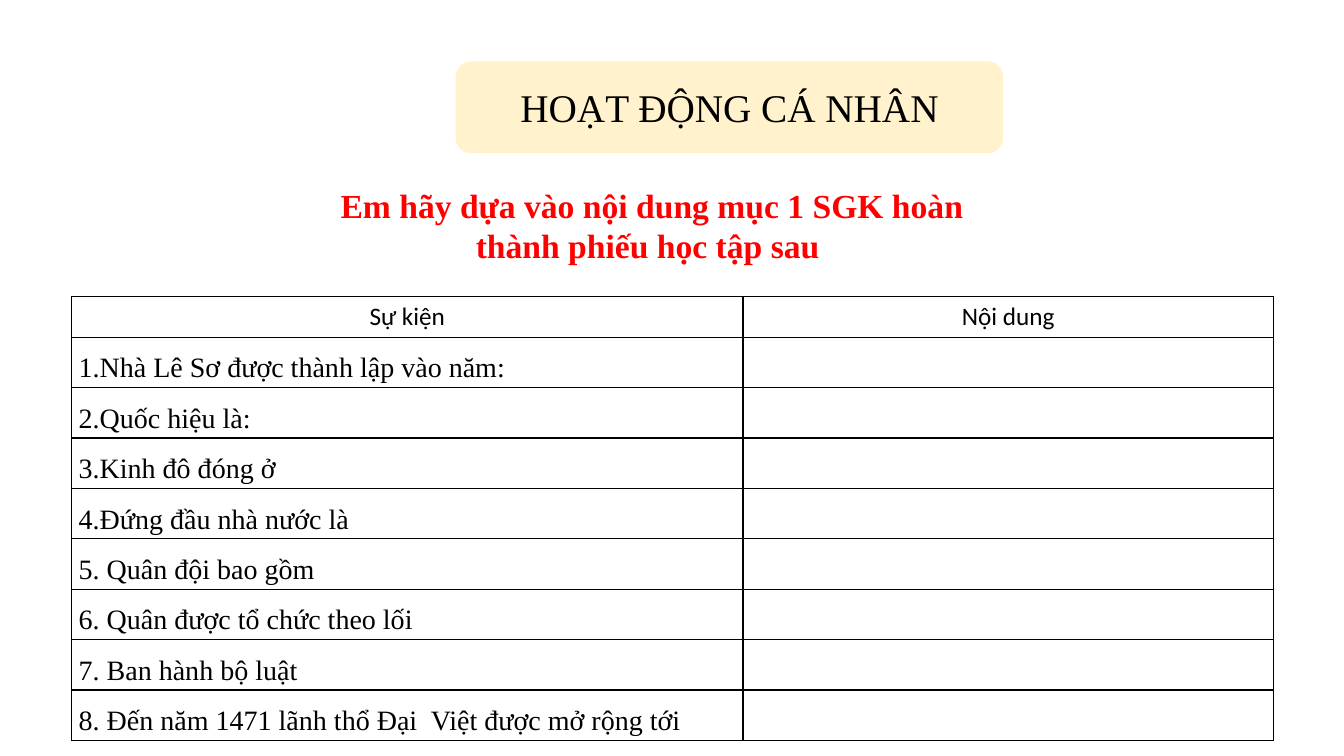
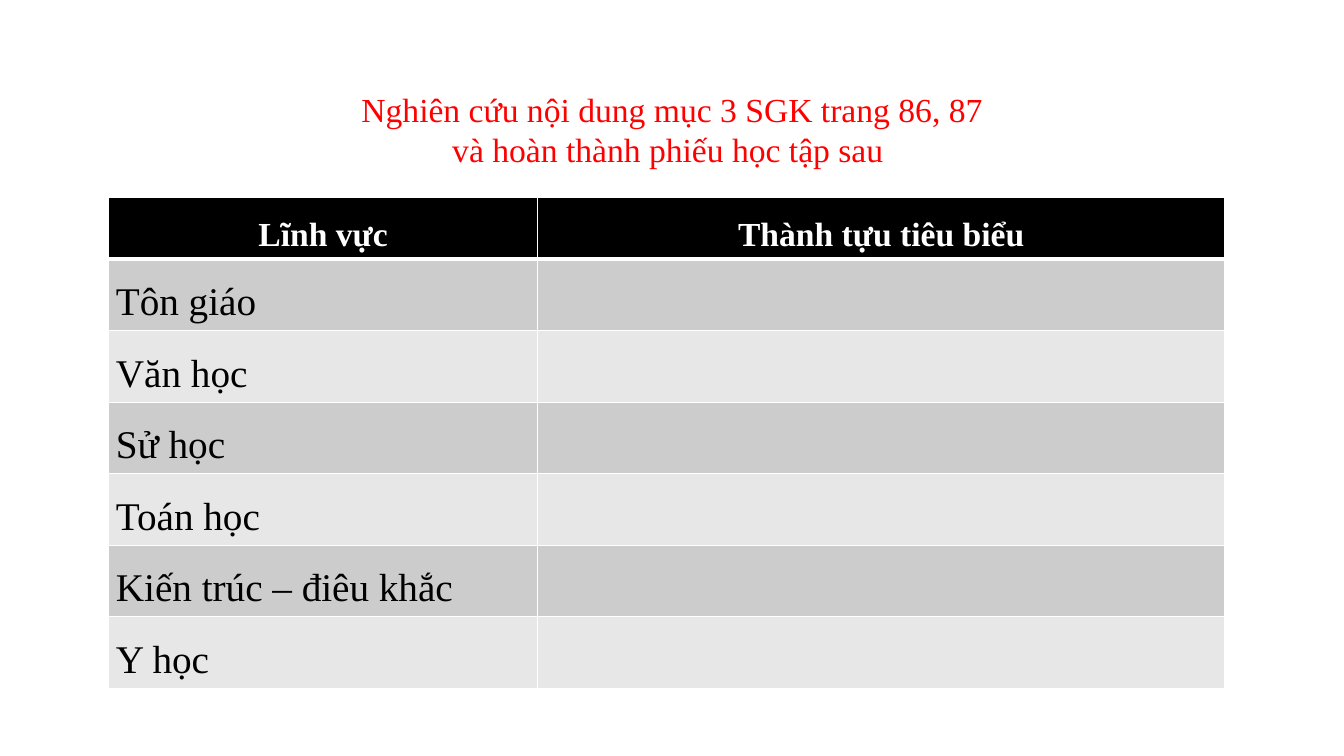
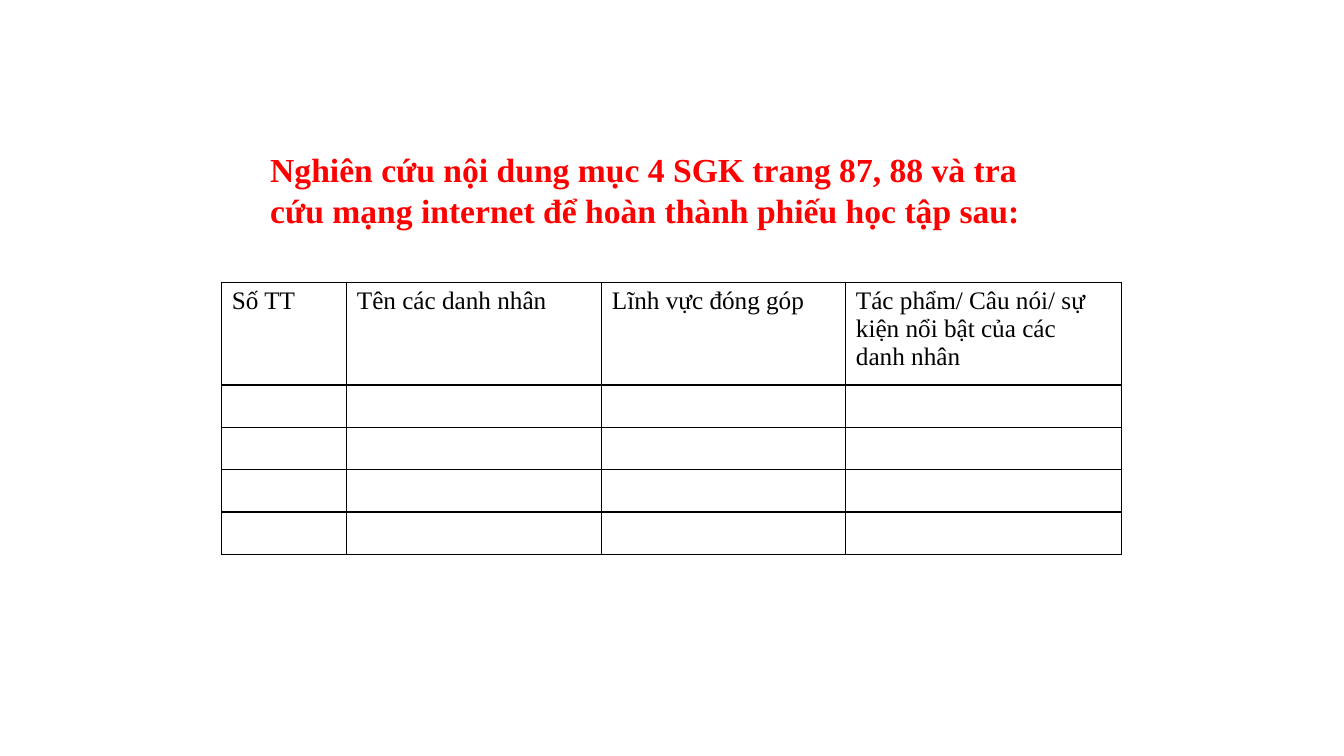
from dataclasses import dataclass

from lxml.etree import SubElement
from pptx import Presentation
from pptx.dml.color import RGBColor
from pptx.enum.shapes import MSO_SHAPE
from pptx.enum.text import MSO_ANCHOR, MSO_AUTO_SIZE, PP_ALIGN
from pptx.oxml.ns import qn
from pptx.util import Inches, Pt


@dataclass(frozen=True)
class Theme:
    serif: str = "Times New Roman"
    sans: str = "Calibri"
    black: str = "000000"
    white: str = "FFFFFF"
    red: str = "FF0000"
    cream: str = "FFF2CC"
    bands: tuple = ("CCCCCC", "E7E7E7")
    title_size: int = 24
    banner_size: int = 28
    small_size: int = 18
    list_size: int = 20
    large_size: int = 28
    line_width: int = 1
    header_rule: int = 3


THEME = Theme()
TIGHT = (0.07, 0)  # horizontal and vertical cell margins
NORMAL = (0.1, 0.05)

# Content: places and lengths in inches
BANNER = {"text": "HOẠT ĐỘNG CÁ NHÂN", "place": (4.52, 0.61, 5.43, 0.91)}

WORKSHEETS = [
    {
        "title": "Em hãy dựa vào nội dung mục 1 SGK hoàn thành phiếu học tập sau ",
        "title_place": (3.13, 1.78, 6.67, 0.91),
        "title_format": {"bold": True, "align": PP_ALIGN.CENTER},
        "banner": BANNER,
        "origin": (0.71, 2.94),
        "columns": (6.66, 5.26),
        "heights": (0.4, 0.5),
        "header": ["Sự kiện", "Nội dung"],
        "labels": [
            "1.Nhà Lê Sơ được thành lập vào năm:",
            "2.Quốc hiệu là:",
            "3.Kinh đô đóng ở",
            "4.Đứng đầu nhà nước là",
            "5. Quân đội bao gồm",
            "6. Quân được tổ chức theo lối",
            "7. Ban hành bộ luật",
            "8. Đến năm 1471 lãnh thổ Đại  Việt được mở rộng tới",
        ],
        "header_format": {"font": THEME.sans, "size": THEME.small_size,
                          "align": PP_ALIGN.CENTER},
        "label_format": {"size": THEME.list_size, "spacing": 1.5},
        "header_margins": NORMAL,
    },
    {
        "title": "Nghiên cứu nội dung mục 3 SGK trang 86, 87 và hoàn thành phiếu học tập sau ",
        "title_place": (3.33, 0.83, 6.67, 0.91),
        "title_format": {"align": PP_ALIGN.CENTER},
        "origin": (1.08, 1.96),
        "columns": (4.25, 6.82),
        "heights": (0.61, 0.71),
        "header": ["Lĩnh vực", "Thành tựu tiêu biểu"],
        "labels": ["Tôn giáo", "Văn học", "Sử học", "Toán học",
                   "Kiến trúc – điêu khắc", "Y học"],
        "header_format": {"size": THEME.title_size, "color": THEME.white, "bold": True,
                          "align": PP_ALIGN.CENTER, "spacing": 1.5},
        "label_format": {"size": THEME.large_size, "align": PP_ALIGN.JUSTIFY,
                         "spacing": 1.5},
        "header_margins": TIGHT,
        "banded": True,
    },
    {
        "title": "Nghiên cứu nội dung mục 4 SGK trang 87, 88 và tra cứu mạng internet "
                 "để hoàn thành phiếu học tập sau:",
        "title_place": (2.58, 1.43, 7.86, 0.91),
        "title_format": {"bold": True, "align": PP_ALIGN.LEFT},
        "origin": (2.2, 2.8),
        "columns": (1.24, 2.53, 2.42, 2.73),
        "heights": (1.02, 0.42),
        "header": ["Số TT", "Tên các danh nhân", "Lĩnh vực đóng góp",
                   "Tác phẩm/ Câu nói/ sự kiện nổi bật của các danh nhân"],
        "labels": [""] * 4,
        "header_format": {"size": THEME.small_size},
        "label_format": {},
        "header_margins": NORMAL,
    },
]


def write_text(frame, text, font=THEME.serif, size=THEME.small_size, color=THEME.black,
               bold=False, align=PP_ALIGN.LEFT, spacing=None):
    paragraph = frame.paragraphs[0]
    paragraph.alignment = align
    if spacing:
        paragraph.line_spacing = spacing
    run = paragraph.add_run()
    run.text = text
    run.font.name = font
    run.font.size = Pt(size)
    run.font.bold = bold
    run.font.color.rgb = RGBColor.from_string(color)


def add_title(slide, text, place, **text_format):
    title = slide.shapes.title
    title.left, title.top, title.width, title.height = map(Inches, place)
    frame = title.text_frame
    frame.word_wrap = True
    frame.auto_size = MSO_AUTO_SIZE.NONE
    frame.vertical_anchor = MSO_ANCHOR.TOP
    write_text(frame, text, size=THEME.title_size, color=THEME.red, **text_format)


def add_banner(slide, text, place):
    shape = slide.shapes.add_shape(MSO_SHAPE.ROUNDED_RECTANGLE, *map(Inches, place))
    shape.shadow.inherit = False
    shape.fill.solid()
    shape.fill.fore_color.rgb = RGBColor.from_string(THEME.cream)
    shape.line.fill.background()
    shape.text_frame.vertical_anchor = MSO_ANCHOR.MIDDLE
    write_text(shape.text_frame, text, size=THEME.banner_size, align=PP_ALIGN.CENTER)


def set_borders(cell, color, top, bottom):
    """Draw all four sides; call before the fill, which must follow in the XML."""
    properties = cell._tc.get_or_add_tcPr()
    widths = {"L": THEME.line_width, "R": THEME.line_width, "T": top, "B": bottom}
    for side, width in widths.items():
        line = SubElement(properties, qn(f"a:ln{side}"), w=str(Pt(width)))
        fill = SubElement(line, qn("a:solidFill"))
        SubElement(fill, qn("a:srgbClr"), val=color)


def format_cell(cell, row, banded):
    # The heavier rule lies between the header and the first band
    rule = THEME.header_rule if banded else THEME.line_width
    set_borders(cell, THEME.white if banded else THEME.black,
                top=rule if row == 1 else THEME.line_width,
                bottom=rule if row == 0 else THEME.line_width)
    if banded:
        cell.fill.solid()
        color = THEME.bands[(row - 1) % 2] if row else THEME.black
        cell.fill.fore_color.rgb = RGBColor.from_string(color)
    else:
        cell.fill.background()


def add_worksheet_table(slide, sheet):
    columns = sheet["columns"]
    header_height, row_height = sheet["heights"]
    blanks = [""] * (len(columns) - 1)
    rows = [sheet["header"]] + [[label] + blanks for label in sheet["labels"]]
    heights = [header_height] + [row_height] * len(sheet["labels"])

    table = slide.shapes.add_table(
        len(rows), len(columns), *map(Inches, sheet["origin"]),
        Inches(sum(columns)), Inches(sum(heights))).table
    table.first_row = table.horz_banding = False
    for column, width in zip(table.columns, columns):
        column.width = Inches(width)

    for row, texts in enumerate(rows):
        table.rows[row].height = Inches(heights[row])
        text_format = sheet["label_format"] if row else sheet["header_format"]
        for column, text in enumerate(texts):
            cell = table.cell(row, column)
            format_cell(cell, row, sheet.get("banded", False))
            if text:
                across, down = TIGHT if row else sheet["header_margins"]
                cell.margin_left = cell.margin_right = Inches(across)
                cell.margin_top = cell.margin_bottom = Inches(down)
                write_text(cell.text_frame, text, **text_format)


def main():
    presentation = Presentation()
    presentation.slide_width = Inches(13.33)
    presentation.slide_height = Inches(7.5)
    title_only = presentation.slide_layouts[5]
    for sheet in WORKSHEETS:
        slide = presentation.slides.add_slide(title_only)
        add_title(slide, sheet["title"], sheet["title_place"], **sheet["title_format"])
        if "banner" in sheet:
            add_banner(slide, **sheet["banner"])
        add_worksheet_table(slide, sheet)
    presentation.save("out.pptx")


if __name__ == "__main__":
    main()
